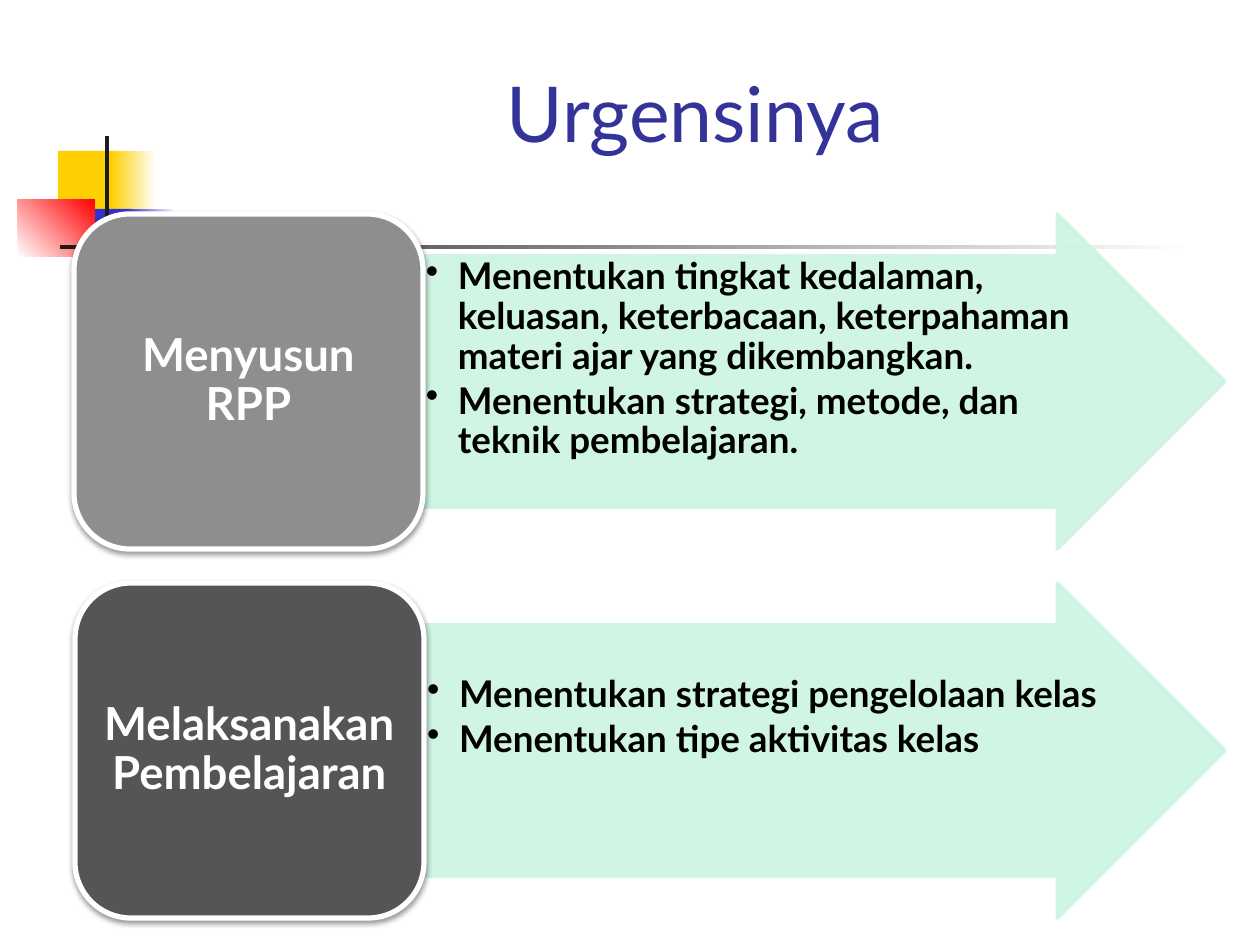
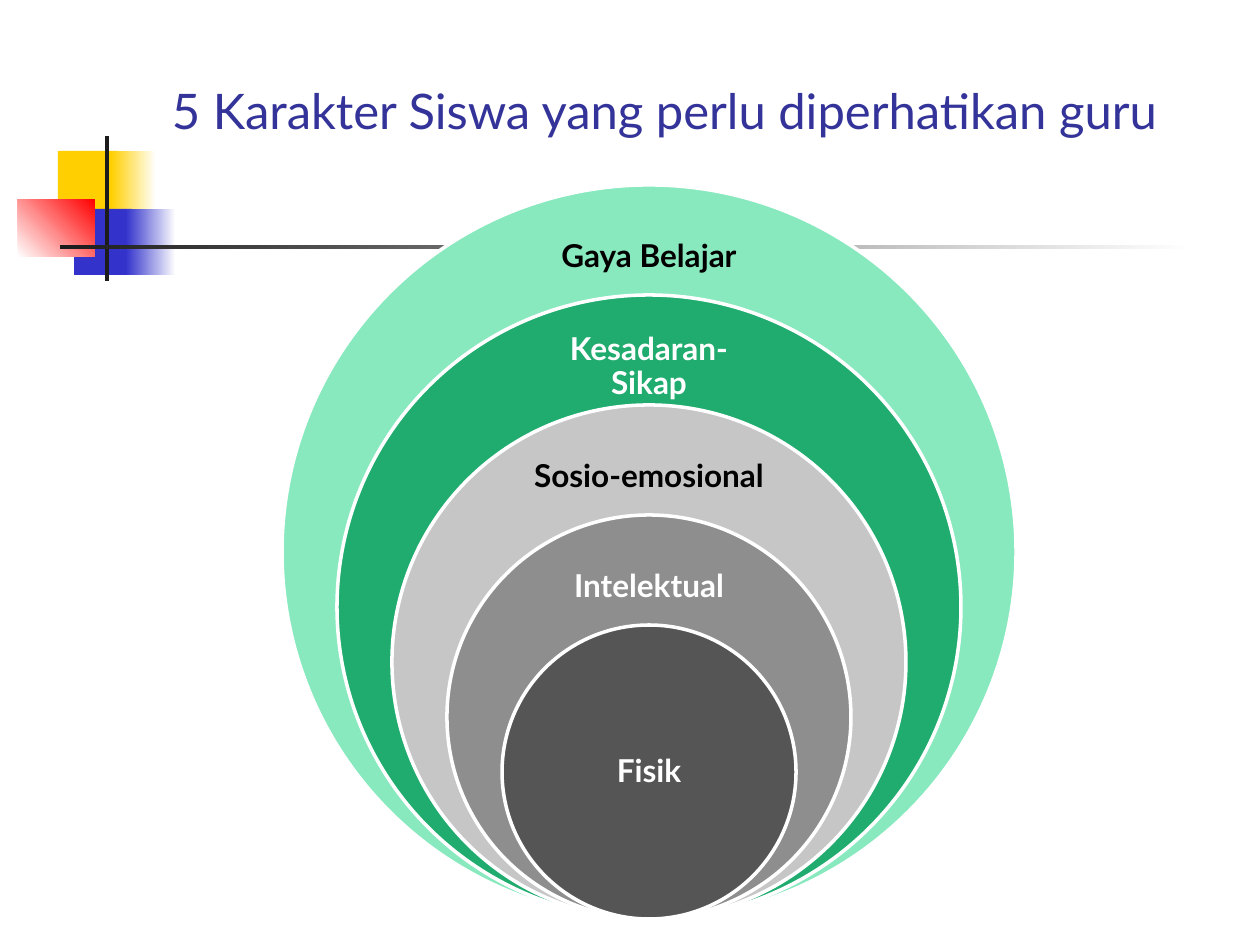
import pptx
import pptx.dml.color
import pptx.enum.shapes
import pptx.enum.text
import pptx.oxml.ns
import pptx.util
from lxml import etree

SHAPE = pptx.enum.shapes.MSO_SHAPE
ALIGN = pptx.enum.text.PP_ALIGN
ANCHOR = pptx.enum.text.MSO_ANCHOR
EMU_PER_PX = 914400 / 126
FONT = "Lato"
WHITE, BLACK, INK = "FFFFFF", "000000", "1C1C1C"
YELLOW, BLUE, RED, TITLE_BLUE = "FFCF01", "3333CC", "FF0000", "333399"
MINT, PALE_MINT, GREEN = "88E9BE", "CCF5E1", "20AC6F"
LIGHT_GREY, GREY, DARK_GREY = "C6C6C6", "8E8E8E", "555555"


def px(length):
    """Turn pixels into EMU."""
    return pptx.util.Emu(round(length * EMU_PER_PX))


def rgb(color):
    """Turn a hex string into a colour."""
    return pptx.dml.color.RGBColor.from_string(color)


def add_xml(parent, tag, **attributes):
    """Append a DrawingML element and return it."""
    return etree.SubElement(parent, pptx.oxml.ns.qn(tag), attributes)


def add_part(slide, kind, box, fill, line=None, line_width=2):
    """Draw a preset shape with a plain fill and an optional outline."""
    part = slide.shapes.add_shape(kind, *map(px, box))
    part.shadow.inherit = False
    part.fill.solid()
    part.fill.fore_color.rgb = rgb(fill)
    if line:
        part.line.color.rgb = rgb(line)
        part.line.width = pptx.util.Pt(line_width)
    else:
        part.line.fill.background()
    return part


def add_fade(slide, box, start, end, angle=0):
    """Draw a rectangle that fades between two colours."""
    fade = add_part(slide, SHAPE.RECTANGLE, box, start)
    fade.fill.gradient()
    fade.fill.gradient_angle = angle
    for stop, color in zip(fade.fill.gradient_stops, (start, end)):
        stop.color.rgb = rgb(color)


def write(frame, *lines, size, color, bold=False, align=ALIGN.CENTER,
          anchor=ANCHOR.MIDDLE, inset=(13, 6), spacing=None, bullet=False):
    """Fill a text frame with formatted paragraphs."""
    frame.word_wrap = True
    frame.vertical_anchor = anchor
    frame.margin_left = frame.margin_right = px(inset[0])
    frame.margin_top = frame.margin_bottom = px(inset[1])
    for index, line in enumerate(lines):
        paragraph = frame.add_paragraph() if index else frame.paragraphs[0]
        paragraph.alignment = align
        paragraph.line_spacing = spacing
        run = paragraph.add_run()
        run.text = line
        run.font.name = FONT
        run.font.size = pptx.util.Pt(size)
        run.font.bold = bold
        run.font.color.rgb = rgb(color)
        if bullet:
            paragraph.space_after = pptx.util.Pt(3)
            properties = paragraph._p.get_or_add_pPr()
            properties.set("marL", str(px(32)))
            properties.set("indent", str(px(-32)))
            add_xml(properties, "a:buChar", char="•")


def add_text(slide, box, *lines, **text_format):
    """Place a text box."""
    write(slide.shapes.add_textbox(*map(px, box)).text_frame, *lines, **text_format)


def add_ornament(slide, left, top):
    """Draw the coloured squares and the crossing rules."""
    def at(x, y, width, height):
        return left + x, top + y, width, height

    add_part(slide, SHAPE.RECTANGLE, at(40, 15, 60, 66), YELLOW)
    add_fade(slide, at(93, 15, 45, 66), YELLOW, WHITE)
    add_part(slide, SHAPE.RECTANGLE, at(56, 73, 58, 66), BLUE)
    add_fade(slide, at(108, 73, 50, 66), BLUE, WHITE)
    add_fade(slide, at(0, 63, 77, 58), WHITE, RED, angle=45)
    add_part(slide, SHAPE.RECTANGLE, at(87, 0, 4, 145), INK)
    add_fade(slide, at(42, 109, 1134, 4), INK, WHITE)


def add_titled_slide(deck, title, size, height, align):
    """Start a slide with the shared ornament and title."""
    slide = deck.slides.add_slide(deck.slide_layouts[6])
    add_ornament(slide, 18, 136)
    add_text(slide, (159, 29, 1073, height), title, size=size, color=TITLE_BLUE,
             align=align, anchor=ANCHOR.BOTTOM)
    return slide


def set_alpha(fill_format, percent):
    """Make a solid fill partly see-through."""
    color = fill_format._xPr.find(".//" + pptx.oxml.ns.qn("a:srgbClr"))
    add_xml(color, "a:alpha", val=str(percent * 1000))


def add_card_shadow(card):
    """Cast a soft shadow below a card."""
    effects = card._element.spPr.find(pptx.oxml.ns.qn("a:effectLst"))
    shadow = add_xml(effects, "a:outerShdw", blurRad="40000", dist="20000",
                     dir="5400000", rotWithShape="0")
    color = add_xml(shadow, "a:srgbClr", val=BLACK)
    add_xml(color, "a:alpha", val="38000")


def add_stage(slide, box, name, color, points, points_offset):
    """Draw a stage card with its arrow of bullet points."""
    left, top, width, height = box
    card_width = 349
    arrow_left = left + card_width + 2
    arrow = add_part(slide, SHAPE.RIGHT_ARROW,
                     (arrow_left, top, left + width - arrow_left, height),
                     PALE_MINT, PALE_MINT)
    arrow.adjustments[0] = 0.75
    set_alpha(arrow.fill, 90)
    set_alpha(arrow.line.fill, 90)
    points_box = (arrow_left, top + 43 + points_offset, 675, 252 - points_offset)
    add_text(slide, points_box, *points, size=21, color=BLACK, bold=True,
             align=ALIGN.LEFT, anchor=ANCHOR.TOP, inset=(1, 1), spacing=0.9, bullet=True)
    card = add_part(slide, SHAPE.ROUNDED_RECTANGLE, (left, top, card_width, height),
                    color, WHITE, 3)
    add_card_shadow(card)
    write(card.text_frame, name, size=26, color=WHITE, bold=True,
          inset=(6, 6), spacing=0.9)


def build_urgency(deck):
    """Build the slide with two stages."""
    slide = add_titled_slide(deck, "Urgensinya", 44, 135, ALIGN.CENTER)
    add_stage(slide, (74, 214, 1151, 335), "Menyusun RPP", GREY, (
        "Menentukan tingkat kedalaman, keluasan, keterbacaan, keterpahaman "
        "materi ajar yang dikembangkan.",
        "Menentukan strategi, metode, dan teknik pembelajaran."), 0)
    add_stage(slide, (75, 583, 1150, 335), "Melaksanakan Pembelajaran", DARK_GREY, (
        "Menentukan strategi pengelolaan kelas",
        "Menentukan tipe aktivitas kelas"), 49)


def add_nested_circles(slide, box, layers, step):
    """Draw circles that shrink by one step and share their lowest point."""
    left, top, width, height = box
    center = left + width / 2
    for depth, (label, fill, color, label_width) in enumerate(layers):
        diameter = width - depth * step
        circle_top = top + height - diameter
        add_part(slide, SHAPE.OVAL, (center - diameter / 2, circle_top, diameter, diameter),
                 fill, WHITE)
        innermost = depth == len(layers) - 1
        offset, label_height = (diameter / 4, diameter / 2) if innermost else (36, 73)
        label_box = (center - label_width / 2, circle_top + offset, label_width, label_height)
        add_text(slide, label_box, label, size=18, color=color, bold=True,
                 inset=(18, 18), spacing=0.9)


def build_characters(deck):
    """Build the slide with five nested traits."""
    slide = add_titled_slide(deck, "5 Karakter Siswa yang perlu diperhatikan guru",
                             28, 116, ALIGN.LEFT)
    add_nested_circles(slide, (282, 185, 734, 734), (
        ("Gaya Belajar", MINT, BLACK, 276),
        ("Kesadaran-Sikap", GREEN, WHITE, 266),
        ("Sosio-emosional", LIGHT_GREY, BLACK, 270),
        ("Intelektual", GREY, WHITE, 218),
        ("Fisik", DARK_GREY, WHITE, 208)), 110)


def main():
    """Build and save the deck."""
    deck = pptx.Presentation()
    deck.slide_width, deck.slide_height = px(1260), px(945)
    build_urgency(deck)
    build_characters(deck)
    deck.save("out.pptx")


if __name__ == "__main__":
    main()
